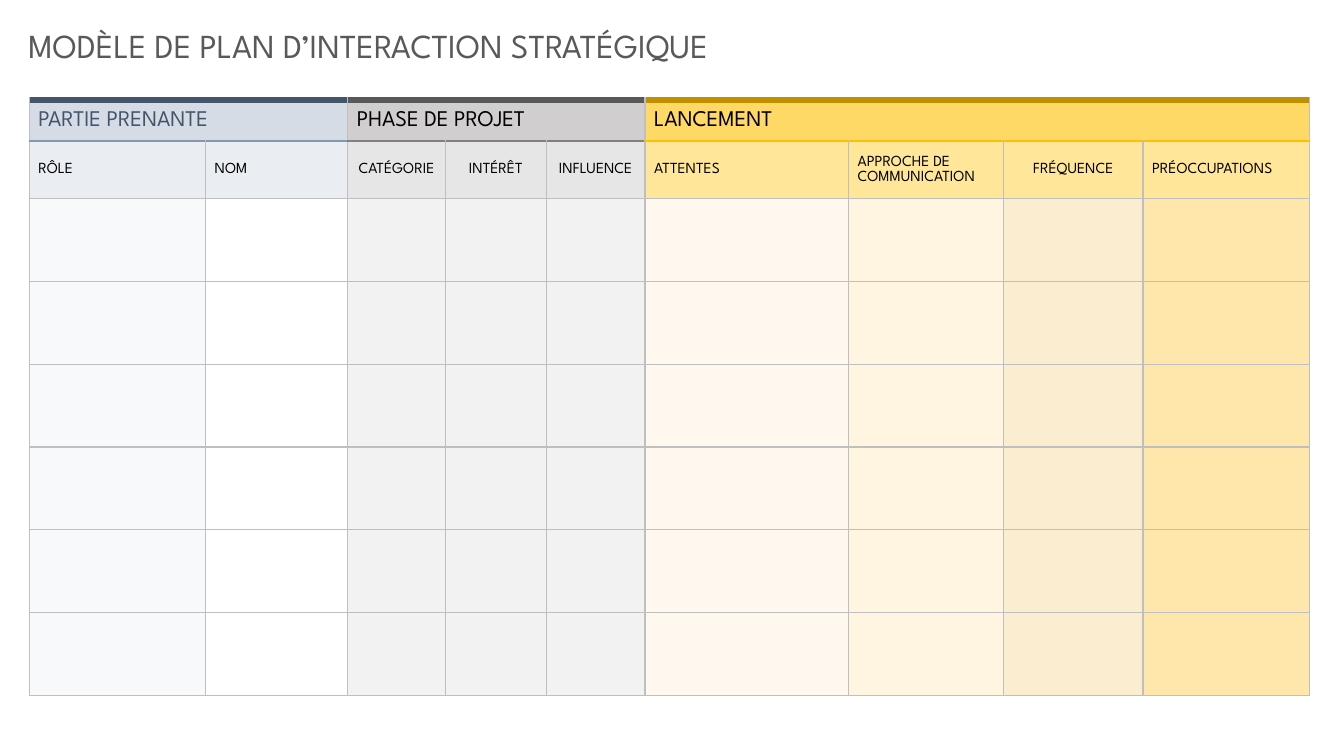
from lxml.etree import SubElement
from pptx import Presentation
from pptx.dml.color import RGBColor
from pptx.enum.text import MSO_ANCHOR, PP_ALIGN
from pptx.oxml.ns import qn
from pptx.util import Pt

FONT = "League Spartan"
BLACK = RGBColor(0x00, 0x00, 0x00)
TITLE_GREY = RGBColor(0x59, 0x59, 0x59)
GRID_GREY = RGBColor(0xBF, 0xBF, 0xBF)
NAVY = RGBColor(0x44, 0x54, 0x6A)
STEEL = RGBColor(0x84, 0x97, 0xB0)
MID_GREY = RGBColor(0x80, 0x80, 0x80)
OCHRE = RGBColor(0xBF, 0x90, 0x00)
AMBER = RGBColor(0xFF, 0xC0, 0x00)
GROUP_BLUE = RGBColor(0xD6, 0xDC, 0xE5)
GROUP_GREY = RGBColor(0xD0, 0xCE, 0xCE)
GROUP_GOLD = RGBColor(0xFF, 0xD9, 0x66)
HEAD_BLUE = RGBColor(0xEA, 0xEE, 0xF3)
HEAD_GREY = RGBColor(0xE7, 0xE6, 0xE6)
HEAD_GOLD = RGBColor(0xFF, 0xE6, 0x99)
PALE_BLUE = RGBColor(0xF7, 0xF9, 0xFB)
WHITE = RGBColor(0xFF, 0xFF, 0xFF)
PALE_GREY = RGBColor(0xF2, 0xF2, 0xF2)
CREAM = RGBColor(0xFE, 0xF8, 0xEF)
IVORY = RGBColor(0xFF, 0xF5, 0xE1)
SAND = RGBColor(0xFB, 0xED, 0xCF)
GOLD = RGBColor(0xFF, 0xE6, 0xAB)

# label, column count, text, fill, top rule, bottom rule, heading fill
GROUPS = [
    ("PARTIE PRENANTE", 2, NAVY, GROUP_BLUE, NAVY, STEEL, HEAD_BLUE),
    ("PHASE DE PROJET", 3, BLACK, GROUP_GREY, TITLE_GREY, MID_GREY, HEAD_GREY),
    ("LANCEMENT", 4, BLACK, GROUP_GOLD, OCHRE, AMBER, HEAD_GOLD),
]
# heading, width in points, centred, body fill
COLUMNS = [
    ("RÔLE", 126, False, PALE_BLUE),
    ("NOM", 101.5, False, WHITE),
    ("CATÉGORIE", 69.8, True, PALE_GREY),
    ("INTÉRÊT", 72, True, PALE_GREY),
    ("INFLUENCE", 70.6, True, PALE_GREY),
    ("ATTENTES", 145.4, False, CREAM),
    ("APPROCHE DE COMMUNICATION", 110.9, False, IVORY),
    ("FRÉQUENCE", 99.4, True, SAND),
    ("PRÉOCCUPATIONS", 118.8, False, GOLD),
]
GROUP_HEIGHT, HEADING_HEIGHT, BODY_ROWS = 29.5, 41, 6


def style_cell(cell, fill, top=(GRID_GREY, 1), bottom=(GRID_GREY, 1)):
    """Draw the four borders, then the fill that must follow them."""
    properties = cell._tc.get_or_add_tcPr()
    side = (GRID_GREY, 1)
    for tag, (color, width) in zip(("a:lnL", "a:lnR", "a:lnT", "a:lnB"), (side, side, top, bottom)):
        line = SubElement(properties, qn(tag), w=str(Pt(width)))
        SubElement(SubElement(line, qn("a:solidFill")), qn("a:srgbClr"), val=str(color))
    cell.fill.solid()
    cell.fill.fore_color.rgb = fill


def write_cell(cell, text, size, color=BLACK, centred=False):
    cell.text = text
    cell.vertical_anchor = MSO_ANCHOR.MIDDLE
    cell.margin_left = Pt(0.7 if centred else 6.5)
    cell.margin_top = cell.margin_right = Pt(0.7)
    cell.margin_bottom = Pt(0)
    para = cell.text_frame.paragraphs[0]
    para.alignment = PP_ALIGN.CENTER if centred else PP_ALIGN.LEFT
    para.font.name, para.font.size, para.font.color.rgb = FONT, Pt(size), color


def add_title(page, left, top, width, height):
    title = page.shapes.title
    title.left, title.top, title.width, title.height = Pt(left), Pt(top), Pt(width), Pt(height)
    frame = title.text_frame
    frame.text = "MODÈLE DE PLAN D’INTERACTION STRATÉGIQUE"
    frame.vertical_anchor = MSO_ANCHOR.MIDDLE
    para = frame.paragraphs[0]
    para.alignment, para.line_spacing = PP_ALIGN.LEFT, 1.0
    para.font.name, para.font.size, para.font.color.rgb = FONT, Pt(24), TITLE_GREY


def add_plan_table(page, left, top, width, height):
    table = page.shapes.add_table(
        BODY_ROWS + 2, len(COLUMNS), Pt(left), Pt(top), Pt(width), Pt(height)).table
    table.first_row = table.horz_banding = False
    body_height = (height - GROUP_HEIGHT - HEADING_HEIGHT) / BODY_ROWS
    for row, row_height in zip(table.rows, [GROUP_HEIGHT, HEADING_HEIGHT] + [body_height] * BODY_ROWS):
        row.height = Pt(row_height)

    # Group bands and the column headings under them
    first = 0
    for label, count, color, fill, top_rule, bottom_rule, heading_fill in GROUPS:
        rule = (bottom_rule, 2.25)
        for index in range(first, first + count):
            style_cell(table.cell(0, index), fill, (top_rule, 4.5), rule)
            heading, _, centred, _ = COLUMNS[index]
            style_cell(table.cell(1, index), heading_fill, top=rule)
            write_cell(table.cell(1, index), heading, 11, centred=centred)
        table.cell(0, first).merge(table.cell(0, first + count - 1))
        write_cell(table.cell(0, first), label, 16, color)
        first += count

    # Empty body cells
    for index, (_, column_width, _, fill) in enumerate(COLUMNS):
        table.columns[index].width = Pt(column_width)
        for row in range(2, BODY_ROWS + 2):
            style_cell(table.cell(row, index), fill)


def main():
    deck = Presentation()
    deck.slide_width, deck.slide_height = Pt(960), Pt(540)
    page = deck.slides.add_slide(deck.slide_layouts[5])
    add_title(page, 13, 14.4, 657.4, 36)
    add_plan_table(page, 20.9, 71.3, 914.4, 425.5)
    deck.save("out.pptx")


if __name__ == "__main__":
    main()
